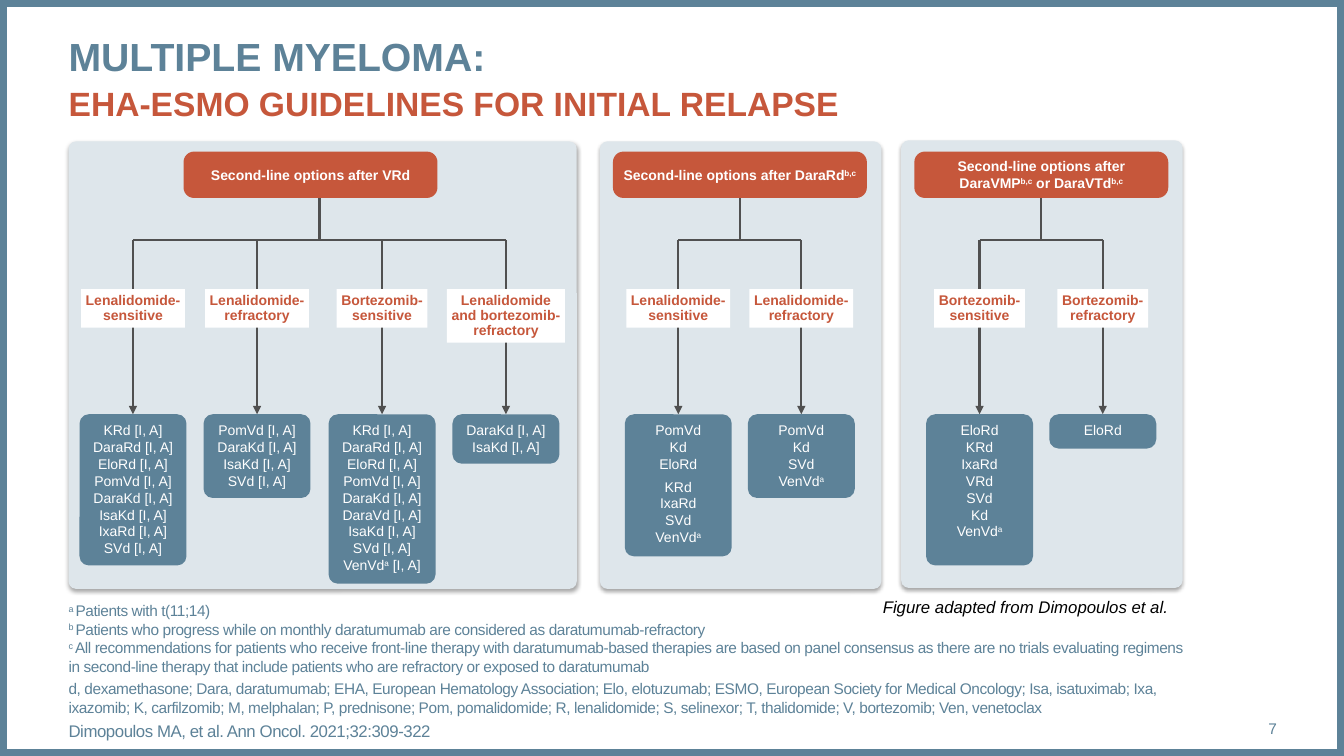
"""Build the slide on guidelines for initial relapse of multiple myeloma."""
import copy
from dataclasses import dataclass

from lxml import etree
from pptx import Presentation
from pptx.dml.color import RGBColor
from pptx.enum import shapes, text
from pptx.oxml.ns import qn
from pptx.util import Pt

TITLE = [("MULTIPLE MYELOMA:\n", 28, "slate"),
         ("EHA-ESMO GUIDELINES FOR INITIAL RELAPSE", 24, "rust")]
GRADE = " [I, A]"
LEN_S, LEN_R = "Lenalidomide-\nsensitive", "Lenalidomide-\nrefractory"
BOR_S, BOR_R = "Bortezomib-\nsensitive", "Bortezomib-\nrefractory"
BOTH = "Lenalidomide|and bortezomib-\nrefractory"
WIDE = {LEN_S: 74.2, LEN_R: 74.2, BOR_S: 64.8, BOR_R: 64.8, BOTH: 84.2}
PANELS = [
    {"left": 49, "top": 101, "width": 363, "stem": 228.2, "mid": 221.8,
     "head": "Second-line options after VRd", "grade": GRADE,
     "arms": [
         (95, LEN_S, "KRd DaraRd EloRd PomVd DaraKd IsaKd IxaRd SVd", 108),
         (183.6, LEN_R, "PomVd DaraKd IsaKd SVd", 59.8),
         (272.9, BOR_S, "KRd DaraRd EloRd PomVd DaraKd DaraVd IsaKd SVd VenVd^a^", 121),
         (361.4, BOTH, "DaraKd IsaKd", 35.3)]},
    {"left": 428.5, "top": 101, "width": 201, "stem": 528.5, "mid": 528.5,
     "head": "Second-line options after DaraRd^b,c^", "grade": "",
     "arms": [(484.5, LEN_S, "PomVd Kd EloRd|KRd IxaRd SVd VenVd^a^", 101.5),
              (572.4, LEN_R, "PomVd Kd SVd VenVd^a^", 59.8)]},
    {"left": 643.7, "top": 100.3, "width": 201, "stem": 743.8, "mid": 743.8,
     "head": "Second-line options after\nDaraVMP^b,c^ or DaraVTd^b,c^", "grade": "",
     "arms": [(699.7, BOR_S, "EloRd KRd IxaRd VRd SVd Kd VenVd^a^", 108),
              (787.7, BOR_R, "EloRd", 24.5)]},
]
NOTES = [
    ("^a ^Patients with t(11;14)\n"
     "^b ^Patients who progress while on monthly daratumumab are considered as "
     "daratumumab-refractory\n"
     "^c ^All recommendations for patients who receive front-line therapy with "
     "daratumumab-based therapies are based on panel consensus as there are no trials "
     "evaluating regimens in second-line therapy that include patients who are "
     "refractory or exposed to daratumumab", 11),
    ("d, dexamethasone; Dara, daratumumab; EHA, European Hematology Association; "
     "Elo, elotuzumab; ESMO, European Society for Medical Oncology; Isa, isatuximab; "
     "Ixa, ixazomib; K, carfilzomib; M, melphalan; P, prednisone; Pom, pomalidomide; "
     "R, lenalidomide; S, selinexor; T, thalidomide; V, bortezomib; Ven, venetoclax", 11),
    ("Dimopoulos MA, et al. Ann Oncol. 2021;32:309-322", 12),
]
SOURCE = "Figure adapted from Dimopoulos et al."
BUS, TAGS, BOXES = 171.4, 206.6, 295.9


@dataclass
class Theme:
    """Hold the colours and type sizes."""
    slate: str = "5D8298"
    rust: str = "C6573B"
    pale: str = "DEE6EB"
    grey: str = "505050"
    white: str = "FFFFFF"
    black: str = "000000"
    font: str = "Arial"
    body: float = 10
    note: float = 11
    cite: float = 12


LOOK = Theme()


def rgb(name):
    """Return a theme colour."""
    return RGBColor.from_string(getattr(LOOK, name))


def write(para, words, size, tone, bold=False, italic=False, track=0):
    """Add runs; carets enclose superscripts and newlines become breaks."""
    for part, chunk in enumerate(words.split("^")):
        for row, line in enumerate(chunk.split("\n")):
            if row:
                para.add_line_break()
                para._p[-1].insert(0, copy.deepcopy(run._r.rPr))
            if not line:
                continue
            run = para.add_run()
            run.text = line
            font = run.font
            font.name, font.size = LOOK.font, Pt(size)
            font.bold, font.italic = bold, italic
            font.color.rgb = rgb(tone)
            if track:
                run._r.rPr.set("spc", str(track))
            if part % 2:
                run._r.rPr.set("baseline", "30000")


def frame(shape, side=0, edge=0, anchor="TOP", wrap=True):
    """Set insets, anchor and wrapping of a text frame."""
    body = shape.text_frame
    body.margin_left = body.margin_right = Pt(side)
    body.margin_top = body.margin_bottom = Pt(edge)
    body.vertical_anchor = getattr(text.MSO_ANCHOR, anchor)
    body.word_wrap, body.auto_size = wrap, text.MSO_AUTO_SIZE.NONE
    return body


def paras(body, items):
    """Yield a paragraph for each item."""
    for spot, item in enumerate(items):
        yield body.add_paragraph() if spot else body.paragraphs[0], item


def block(slide, left, top, width, height, tone, curve=0):
    """Draw a filled box with a corner radius."""
    kind = shapes.MSO_SHAPE.ROUNDED_RECTANGLE if curve else shapes.MSO_SHAPE.RECTANGLE
    shape = slide.shapes.add_shape(kind, Pt(left), Pt(top), Pt(width), Pt(height))
    if curve:
        shape.adjustments[0] = curve / min(width, height)
    shape.shadow.inherit = False
    shape.fill.solid()
    shape.fill.fore_color.rgb = rgb(tone)
    shape.line.fill.background()
    return shape


def label(shape, words, tone, edge, anchor="TOP", bold=False, wrap=True, gap=0, lead=1.0):
    """Write centred text in a box."""
    body = frame(shape, 2.9, edge, anchor, wrap)
    for para, words in paras(body, words.split("|")):
        para.alignment = text.PP_ALIGN.CENTER
        para.space_after, para.line_spacing = Pt(gap), lead
        write(para, words, LOOK.body, tone, bold)


def shade(shape):
    """Give a panel a soft shadow."""
    effects = shape._element.spPr.find(qn("a:effectLst"))
    outer = etree.SubElement(effects, qn("a:outerShdw"), blurRad=str(Pt(3.1)),
                             dist=str(Pt(1.8)), dir="5400000", algn="t", rotWithShape="0")
    color = etree.SubElement(outer, qn("a:srgbClr"), val=LOOK.black)
    etree.SubElement(color, qn("a:alpha"), val="35000")


def link(slide, left, top, right, base, arrow=False):
    """Draw a line, with an arrowhead if asked."""
    line = slide.shapes.add_connector(shapes.MSO_CONNECTOR.STRAIGHT,
                                      Pt(left), Pt(top), Pt(right), Pt(base))
    line.line.color.rgb, line.line.width = rgb("grey"), Pt(1.5)
    if arrow:
        etree.SubElement(line.line._get_or_add_ln(), qn("a:tailEnd"), type="triangle")
    etree.SubElement(line._element.spPr, qn("a:effectLst"))


def panel(slide, plan):
    """Draw one decision tree."""
    shade(block(slide, plan["left"], plan["top"], plan["width"], 319.7, "pale", 5.4))
    arms, stem = plan["arms"], plan["stem"]
    link(slide, arms[0][0], BUS, arms[-1][0], BUS)
    link(slide, stem, 128, stem, BUS)
    for mid, name, drugs, height in arms:
        link(slide, mid, BUS, mid, BOXES, True)
        rows = len(name.replace("|", "\n").split("\n"))
        wide = WIDE[name]
        tag = block(slide, mid - wide / 2, TAGS, wide, 5.8 + 10.8 * rows, "white")
        label(tag, name, "rust", 2.9, bold=True, wrap=False, lead=0.9)
        box = block(slide, mid - 38.2, BOXES, 76.4, height, "slate", 6.6)
        lists = ["\n".join(drug + plan["grade"] for drug in group.split())
                 for group in drugs.split("|")]
        label(box, "|".join(lists), "white", 3.6, gap=4)
    head = block(slide, plan["mid"] - 90.7, 108.3, 181.4, 33.1, "rust", 7.5)
    label(head, plan["head"], "white", 3.6, "MIDDLE", True)


def area(slide, left, top, width, height):
    """Add an empty text box."""
    return slide.shapes.add_textbox(Pt(left), Pt(top), Pt(width), Pt(height))


def main():
    """Assemble and save the slide."""
    deck = Presentation()
    deck.slide_width, deck.slide_height = Pt(960), Pt(540)
    slide = deck.slides.add_slide(deck.slide_layouts[5])
    border = block(slide, 0, 0, 960, 540, "white")
    border.fill.background()
    border.line.color.rgb, border.line.width = rgb("slate"), Pt(10)

    title = slide.shapes.title
    title.left, title.top, title.width, title.height = Pt(49), Pt(20.2), Pt(863), Pt(67.7)
    para = frame(title, anchor="MIDDLE").paragraphs[0]
    para.alignment, para.line_spacing = text.PP_ALIGN.LEFT, 1.1
    for words, size, tone in TITLE:
        write(para, words, size, tone, True)

    for plan in PANELS:
        panel(slide, plan)

    notes = frame(area(slide, 49, 500.4, 801.4, 28.8), anchor="BOTTOM")
    for spot, (para, (words, size)) in enumerate(paras(notes, NOTES)):
        para.space_before = Pt(3 if spot else 0)
        write(para, words, size, "slate", track=-30)

    page = frame(area(slide, 850.3, 506.2, 61.9, 28.8), anchor="MIDDLE").paragraphs[0]
    page.alignment = text.PP_ALIGN.RIGHT
    write(page, "7", LOOK.note, "slate")
    credit = frame(area(slide, 623.5, 422.6, 220.3, 21.6), 7.2, 3.6, wrap=False)
    write(credit.paragraphs[0], SOURCE, LOOK.cite, "black", italic=True)
    deck.save("out.pptx")


if __name__ == "__main__":
    main()
